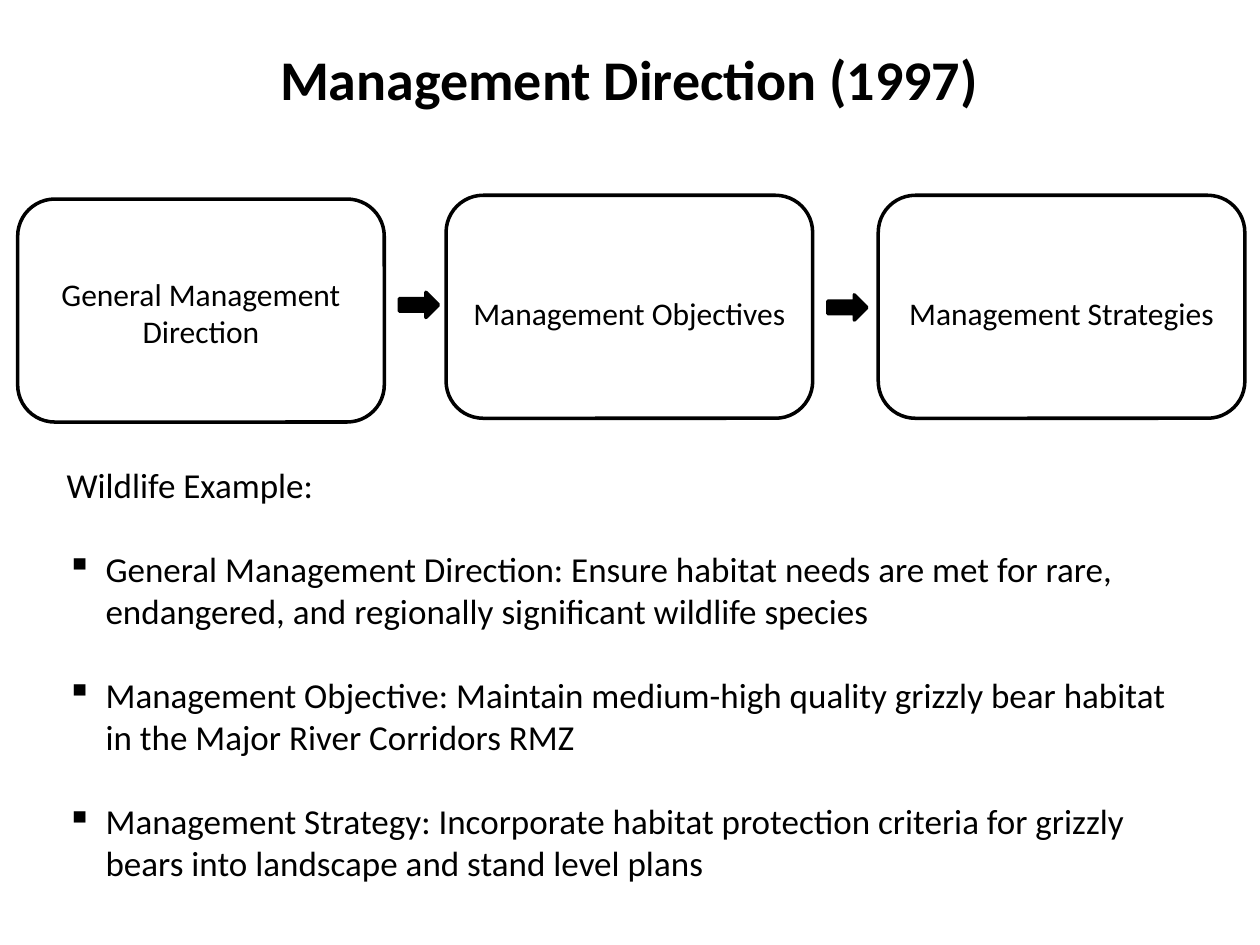
from lxml import etree
from pptx import Presentation
from pptx import util as u
from pptx.dml.color import RGBColor
from pptx.enum import shapes, text
from pptx.oxml.ns import qn

COLOURS = {"ink": "000000", "paper": "FFFFFF"}


class PageBuilder:
    """Holds the style and the slide being filled."""

    font_name = "Calibri"
    line_width = u.Pt(2)
    hanging = u.Inches(0.31)

    def __init__(self, page):
        self.page = page

    def colour(self, name):
        return RGBColor.from_string(COLOURS[name])

    def format_para(self, para, size, bold=False, align=text.PP_ALIGN.LEFT):
        para.alignment = align
        values = {"name": self.font_name, "size": u.Pt(size), "bold": bold}
        for name, value in values.items():
            setattr(para.font, name, value)
        para.font.color.rgb = self.colour("ink")

    def place(self, shape, left, top, width, height):
        values = {"left": left, "top": top, "width": width, "height": height}
        for name, value in values.items():
            setattr(shape, name, u.Inches(value))

    def title(self, words, *area):
        title = self.page.shapes.title
        self.place(title, *area)
        frame = title.text_frame
        frame.text = words
        frame.vertical_anchor = text.MSO_ANCHOR.MIDDLE
        self.format_para(frame.paragraphs[0], 32, True, text.PP_ALIGN.CENTER)

    def outlined(self, kind, fill, *area):
        shape = self.page.shapes.add_shape(kind, *map(u.Inches, area))
        shape.shadow.inherit = False
        shape.fill.solid()
        shape.fill.fore_color.rgb = self.colour(fill)
        shape.line.color.rgb = self.colour("ink")
        shape.line.width = self.line_width
        return shape

    def step(self, words, inset_top, *area):
        box = self.outlined(shapes.MSO_SHAPE.ROUNDED_RECTANGLE, "paper", *area)
        frame = box.text_frame
        frame.word_wrap = True
        frame.vertical_anchor = text.MSO_ANCHOR.MIDDLE
        frame.margin_top = u.Inches(inset_top)
        frame.text = words
        self.format_para(frame.paragraphs[0], 18, align=text.PP_ALIGN.CENTER)

    def arrow(self, *area):
        self.outlined(shapes.MSO_SHAPE.RIGHT_ARROW, "ink", *area)

    def bullet(self, para):
        props = para._p.get_or_add_pPr()
        props.set("marL", str(self.hanging))
        props.set("indent", str(-self.hanging))
        etree.SubElement(props, qn("a:buChar")).set("char", "▪")

    def bullet_list(self, heading, items, *area):
        box = self.page.shapes.add_textbox(*map(u.Inches, area))
        frame = box.text_frame
        frame.word_wrap = True
        frame.text = heading
        self.format_para(frame.paragraphs[0], 20)
        for item in items:
            para = frame.add_paragraph()
            para.text = item
            self.bullet(para)
            para.space_before = u.Pt(24)
            self.format_para(para, 20)


def main():
    deck = Presentation()
    deck.slide_width, deck.slide_height = u.Inches(10), u.Inches(7.5)
    builder = PageBuilder(deck.slides.add_slide(deck.slide_layouts[5]))

    builder.title("Management Direction (1997)", 0.43, 0.3, 9.13, 0.64)

    # Three steps: words, top inset, left, top
    steps = [
        ("General Management Direction", 0.08, 0.14, 1.58),
        ("Management Objectives", 0.14, 3.54, 1.55),
        ("Management Strategies", 0.14, 6.97, 1.55),
    ]
    for words, inset_top, left, top in steps:
        builder.step(words, inset_top, left, top, 2.91, 1.77)

    # Arrows between the steps
    for left, top in [(3.17, 2.32), (6.57, 2.34)]:
        builder.arrow(left, top, 0.31, 0.2)

    # Worked example
    builder.bullet_list(
        "Wildlife Example:",
        [
            "General Management Direction: Ensure habitat needs are met for "
            "rare, endangered, and regionally significant wildlife species",
            "Management Objective: Maintain medium-high quality grizzly bear "
            "habitat in the Major River Corridors RMZ",
            "Management Strategy: Incorporate habitat protection criteria for "
            "grizzly bears into landscape and stand level plans",
        ],
        0.43, 3.63, 9.13, 3.5,
    )

    deck.save("out.pptx")


if __name__ == "__main__":
    main()
